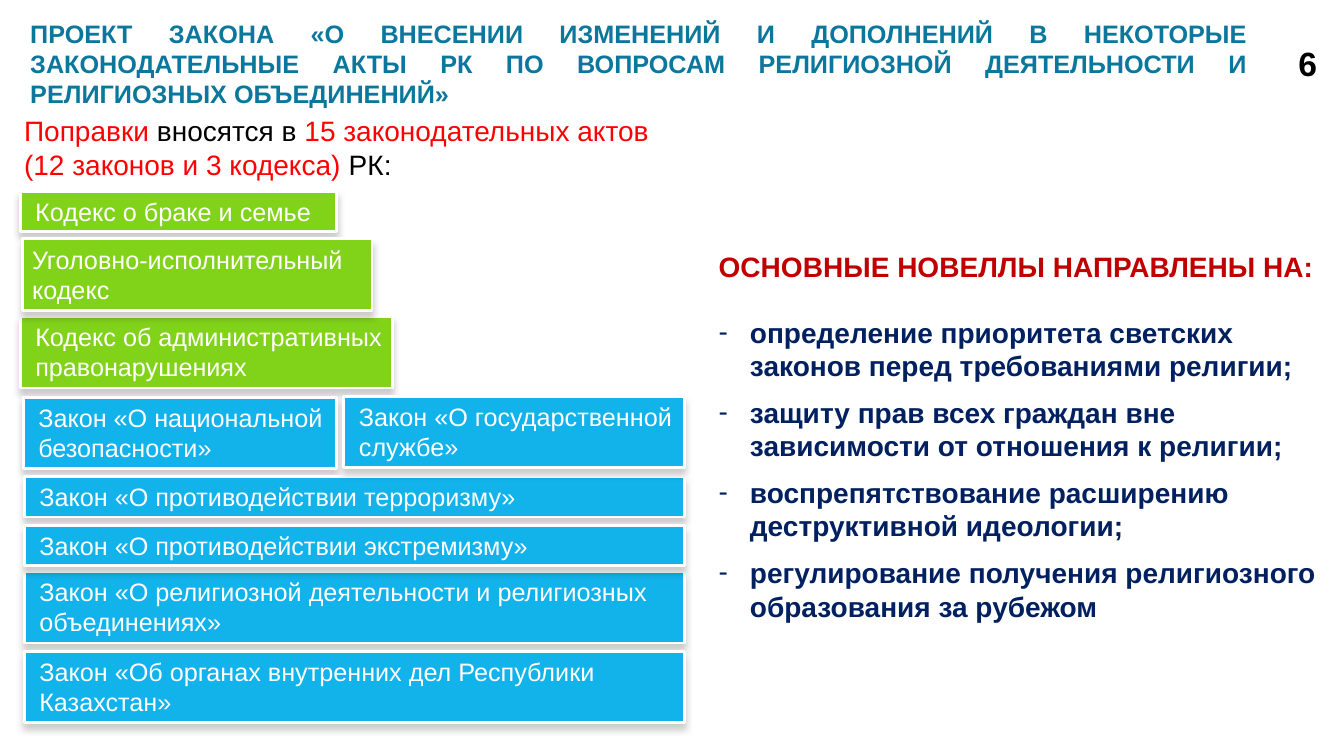
from pptx import Presentation
from pptx.dml.color import RGBColor
from pptx.enum.shapes import MSO_SHAPE
from pptx.enum.text import MSO_ANCHOR, MSO_AUTO_SIZE, PP_ALIGN
from pptx.oxml import parse_xml
from pptx.oxml.ns import nsdecls
from pptx.util import Inches, Pt

WHITE = RGBColor(0xFF, 0xFF, 0xFF)
BLACK = RGBColor(0x00, 0x00, 0x00)
GREEN = RGBColor(0x81, 0xD3, 0x1A)
BLUE = RGBColor(0x12, 0xB2, 0xEB)
TEAL = RGBColor(0x0C, 0x77, 0x9D)
RED = RGBColor(0xFF, 0x00, 0x00)
DARK = RGBColor(0xC0, 0x00, 0x00)
NAVY = RGBColor(0x00, 0x20, 0x60)

TITLE = (
    "ПРОЕКТ ЗАКОНА «О ВНЕСЕНИИ ИЗМЕНЕНИЙ И ДОПОЛНЕНИЙ В НЕКОТОРЫЕ "
    "ЗАКОНОДАТЕЛЬНЫЕ АКТЫ РК ПО ВОПРОСАМ РЕЛИГИОЗНОЙ ДЕЯТЕЛЬНОСТИ И "
    "РЕЛИГИОЗНЫХ ОБЪЕДИНЕНИЙ»"
)
INTRO = [
    [("Поправки ", RED), ("вносятся в ", BLACK), ("15 законодательных актов", RED)],
    [("(12 законов и 3 кодекса) ", RED), ("РК:", BLACK)],
]
LOW, TALL = 0.4, 0.71
ACTS = [
    ("Кодекс о браке и семье", 0.06, 0.9, 3.14, LOW, GREEN, 0.05),
    ("Кодекс об административных правонарушениях", 0.06, 2.14, 3.69, TALL, GREEN, 0.05),
    ("Закон «О религиозной деятельности и религиозных объединениях»",
     0.1, 4.67, 6.55, TALL, BLUE, 0.05),
    ("Закон «О национальной безопасности»", 0.09, 2.94, 3.11, TALL, BLUE, 0.05),
    ("Уголовно-исполнительный кодекс", 0.08, 1.37, 3.47, TALL, GREEN, 0),
    ("Закон «О противодействии терроризму»", 0.1, 3.73, 6.55, LOW, BLUE, 0.05),
    ("Закон «О противодействии экстремизму»", 0.1, 4.21, 6.55, LOW, BLUE, 0.05),
    ("Закон «Об органах внутренних дел Республики Казахстан»",
     0.1, 5.46, 6.55, TALL, BLUE, 0.05),
    ("Закон «О государственной службе»", 3.27, 2.93, 3.38, TALL, BLUE, 0.05),
]
GOALS = [
    "определение приоритета светских законов перед требованиями религии;",
    "защиту прав всех граждан вне зависимости от отношения к религии;",
    "воспрепятствование расширению деструктивной идеологии;",
    "регулирование получения религиозного образования за рубежом",
]


def shade(blur, dist, angle, alpha):
    return parse_xml(
        f'<a:outerShdw {nsdecls("a")} blurRad="{Pt(blur)}" dist="{Pt(dist)}" '
        f'dir="{angle * 60000}" algn="t" rotWithShape="0"><a:srgbClr val="000000">'
        f'<a:alpha val="{alpha * 1000}"/></a:srgbClr></a:outerShdw>'
    )


def add_run(para, text, size, color, bold=False, glow=False):
    run = para.add_run()
    run.text = text
    font = run.font
    font.name, font.size, font.bold = "Arial", Pt(size), bold
    font.color.rgb = color
    if glow:
        effect = parse_xml(f'<a:effectLst {nsdecls("a")}/>')
        effect.append(shade(3, 3, 45, 43))
        font.fill._xPr.find("{*}solidFill").addnext(effect)


def add_text(slide, left, top, width, height, anchor=MSO_ANCHOR.TOP):
    box = slide.shapes.add_textbox(
        Inches(left), Inches(top), Inches(width), Inches(height))
    frame = box.text_frame
    frame.word_wrap = True
    frame.vertical_anchor = anchor
    return frame


def add_head(slide, left, top, width, height):
    title = slide.shapes.title
    title.left, title.top = Inches(left), Inches(top)
    title.width, title.height = Inches(width), Inches(height)
    frame = title.text_frame
    frame.word_wrap = True
    frame.auto_size = MSO_AUTO_SIZE.SHAPE_TO_FIT_TEXT
    frame.vertical_anchor = MSO_ANCHOR.TOP
    para = frame.paragraphs[0]
    para.alignment = PP_ALIGN.JUSTIFY
    add_run(para, TITLE, 18, TEAL, True)
    para = add_text(slide, left + width, top + 0.25, 0.69, 0.51).paragraphs[0]
    para.alignment = PP_ALIGN.RIGHT
    add_run(para, "6", 24, BLACK, True)


def add_act(slide, text, left, top, width, height, color, indent):
    act = slide.shapes.add_shape(
        MSO_SHAPE.RECTANGLE, Inches(left), Inches(top), Inches(width), Inches(height))
    act.fill.solid()
    act.fill.fore_color.rgb = color
    act.line.color.rgb = WHITE
    act.line.width = Pt(2)
    act.shadow.inherit = False
    act._element.spPr.find("{*}effectLst").append(shade(5, 4, 90, 20))
    frame = act.text_frame
    frame.word_wrap = True
    frame.auto_size = MSO_AUTO_SIZE.SHAPE_TO_FIT_TEXT
    frame.vertical_anchor = MSO_ANCHOR.TOP
    frame.margin_left = Inches(0.1 + indent)
    para = frame.paragraphs[0]
    para.alignment = PP_ALIGN.LEFT
    add_run(para, text, 18, WHITE)


def add_acts(slide, left, top, width):
    frame = add_text(slide, left, top, width, 0.92, MSO_ANCHOR.MIDDLE)
    for i, line in enumerate(INTRO):
        para = frame.add_paragraph() if i else frame.paragraphs[0]
        for text, color in line:
            add_run(para, text, 20, color, glow=True)
    for text, x, y, w, h, color, indent in ACTS:
        add_act(slide, text, left + x, top + y, w, h, color, indent)


def add_goals(slide, left, top, width, height):
    frame = add_text(slide, left, top, width, height, MSO_ANCHOR.MIDDLE)
    para = frame.paragraphs[0]
    para.space_after = Pt(23)
    add_run(para, "ОСНОВНЫЕ НОВЕЛЛЫ НАПРАВЛЕНЫ НА:", 20, DARK, True, True)
    for i, goal in enumerate(GOALS):
        para = frame.add_paragraph()
        if i:
            para.space_before = Pt(9.2)
        props = para._p.get_or_add_pPr()
        props.set("marL", str(Inches(0.31)))
        props.set("indent", str(-Inches(0.31)))
        props.append(parse_xml(f'<a:buFont {nsdecls("a")} typeface="Arial"/>'))
        props.append(parse_xml(f'<a:buChar {nsdecls("a")} char="-"/>'))
        add_run(para, goal, 20, NAVY, True, True)


def main():
    deck = Presentation()
    deck.slide_width, deck.slide_height = Inches(13.33), Inches(7.5)
    slide = deck.slides.add_slide(deck.slide_layouts[5])
    add_head(slide, 0.2, 0.13, 12.27, 1.01)
    add_acts(slide, 0.14, 1, 6.65)
    add_goals(slide, 7.03, 1.62, 6.14, 5.41)
    deck.save("out.pptx")


if __name__ == "__main__":
    main()
